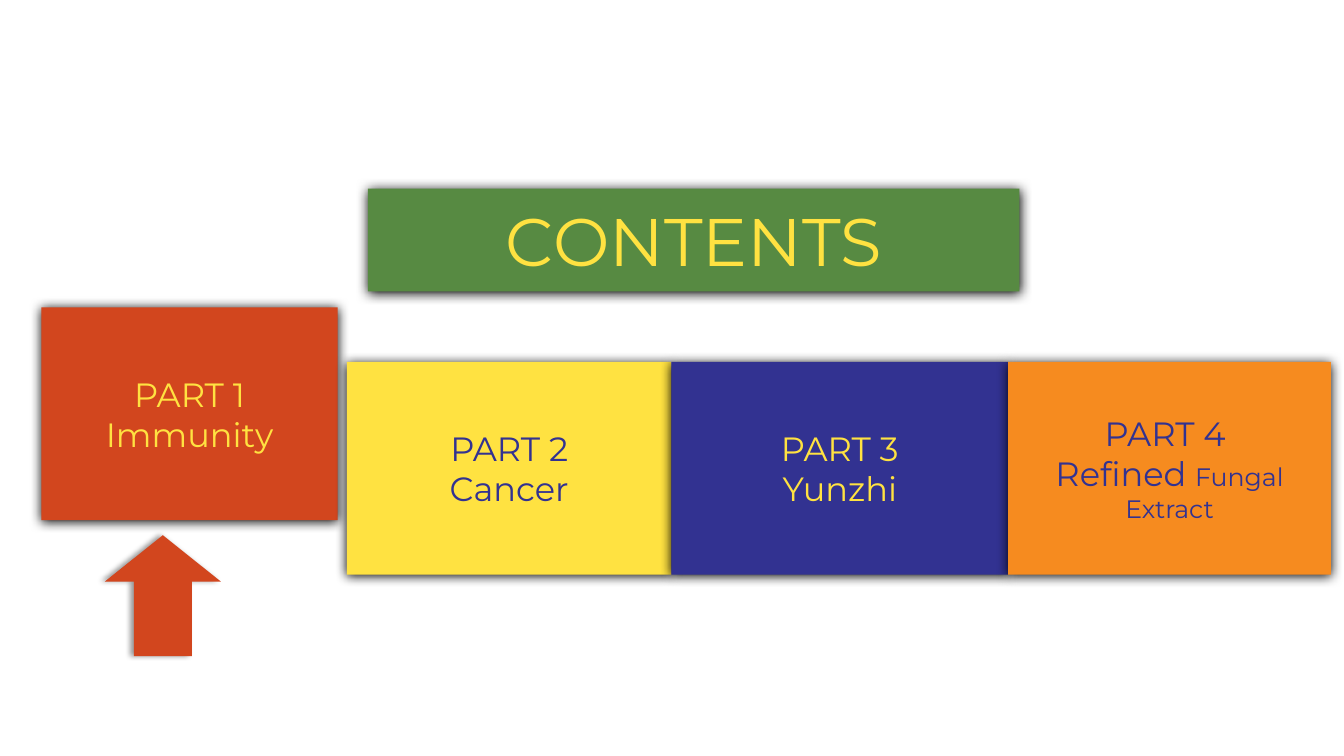
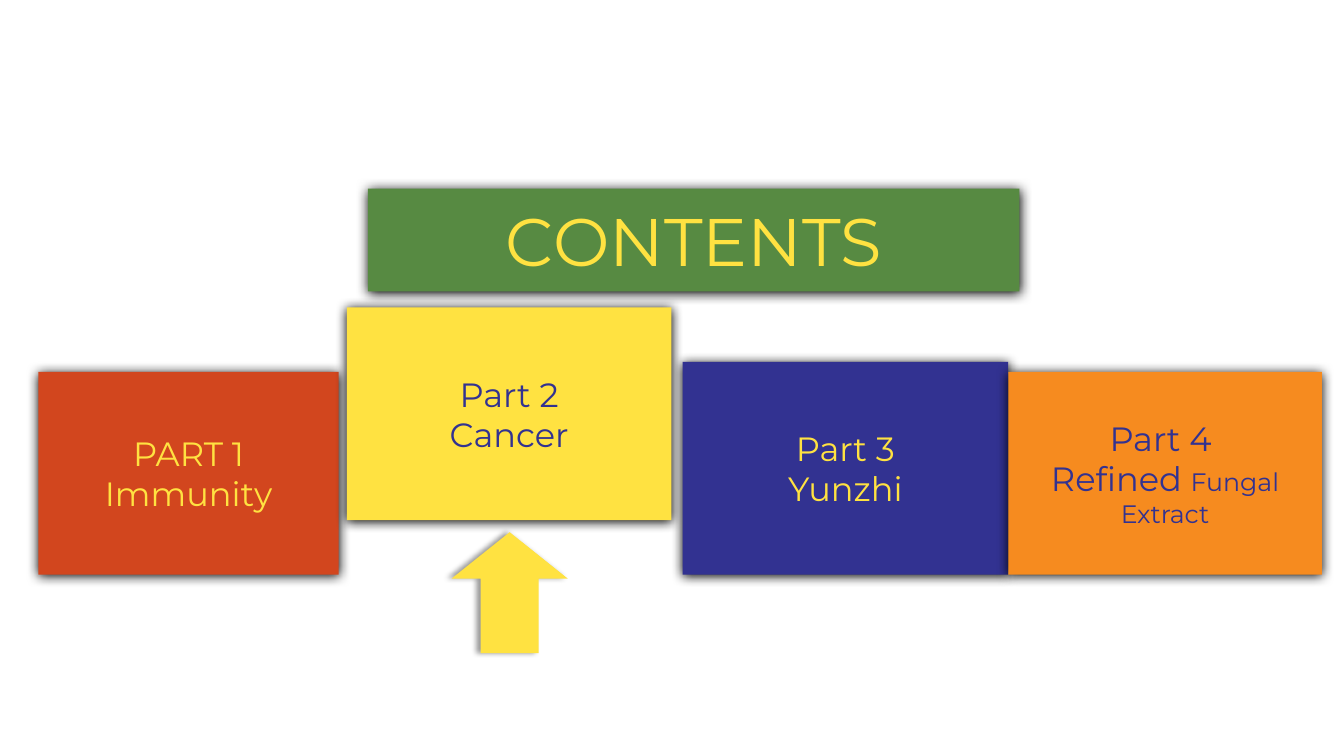
from lxml.etree import SubElement
from pptx import Presentation
from pptx.dml.color import RGBColor
from pptx.enum.shapes import MSO_SHAPE
from pptx.enum.text import MSO_ANCHOR, PP_ALIGN
from pptx.oxml.ns import qn
from pptx.util import Inches, Pt

RED, YELLOW, BLUE = "D2461E", "FFE241", "323291"
ORANGE, GREEN = "F68B1F", "578A42"
FONT = "Montserrat"
BASE, LIFT = 5.7, 0.54
GLOW = dict(alpha=100, blur=8.5, dist=1, angle=90)
SOFT = dict(alpha=40, blur=4, dist=3, angle=180)

PARTS = [
    (RED, YELLOW, [("Immunity", 24)]),
    (YELLOW, BLUE, [("Cancer", 24)]),
    (BLUE, YELLOW, [("Yunzhi", 24)]),
    (ORANGE, BLUE, [("Refined ", 24), ("Fungal Extract", 18)]),
]
SLIDES = [
    {
        "active": 0,
        "arrow": (1.04, 5.31),
        "heads": ["PART 1", "PART 2", "PART 3", "PART 4 "],
        "boxes": [(0.41, 2.94, 2.11), (3.44, 3.22, 2.11),
                  (6.66, 3.34, 2.11), (10, 3.2, 2.11)],
    },
    {
        "active": 1,
        "arrow": (4.48, 5.28),
        "heads": ["PART 1", "Part 2", "Part 3", "Part 4 "],
        "boxes": [(0.38, 2.98, 2.01), (3.44, 3.22, 2.11),
                  (6.77, 3.23, 2.11), (10, 3.11, 2.01)],
    },
]


def color(value):
    return RGBColor.from_string(value)


def shade(shape, alpha, blur, dist, angle):
    shape.shadow.inherit = False
    effect = shape._element.spPr.find(qn("a:effectLst"))
    outer = SubElement(effect, qn("a:outerShdw"), blurRad=str(Pt(blur)),
                       dist=str(Pt(dist)), dir=str(angle * 60000),
                       algn="ctr", rotWithShape="0")
    tint = SubElement(outer, qn("a:srgbClr"), val="000000")
    SubElement(tint, qn("a:alpha"), val=str(alpha * 1000))


def block(slide, kind, area, fill, glow):
    shape = slide.shapes.add_shape(kind, *map(Inches, area))
    shape.fill.solid()
    shape.fill.fore_color.rgb = color(fill)
    shape.line.fill.background()
    shade(shape, **glow)
    return shape


def write(shape, lines, ink, font=FONT):
    frame = shape.text_frame
    frame.word_wrap = True
    frame.vertical_anchor = MSO_ANCHOR.MIDDLE
    for row, runs in enumerate(lines):
        para = frame.paragraphs[0] if row == 0 else frame.add_paragraph()
        para.alignment = PP_ALIGN.CENTER
        for text, size in runs:
            run = para.add_run()
            run.text = text
            run.font.name = font
            run.font.size = Pt(size)
            run.font.color.rgb = color(ink)


def build(slide, data):
    rows = zip(data["heads"], data["boxes"], PARTS)
    for index, (head, (left, width, height), part) in enumerate(rows):
        fill, ink, body = part
        top = BASE - height - (LIFT if index == data["active"] else 0)
        box = block(slide, MSO_SHAPE.RECTANGLE,
                    (left, top, width, height), fill, GLOW)
        write(box, [[(head, 24)], body], ink=ink)
    arrow = block(slide, MSO_SHAPE.UP_ARROW, (*data["arrow"], 1.15, 1.2),
                  PARTS[data["active"]][0], SOFT)
    arrow.adjustments[0] = 0.5
    arrow.adjustments[1] = 0.4
    title = block(slide, MSO_SHAPE.RECTANGLE,
                  (3.65, 1.87, 6.46, 1.02), GREEN, GLOW)
    write(title, [[("CONTENTS", 48)]], ink=YELLOW)


def main():
    deck = Presentation()
    deck.slide_width, deck.slide_height = Inches(13.33), Inches(7.5)
    for data in SLIDES:
        build(deck.slides.add_slide(deck.slide_layouts[6]), data)
    deck.save("out.pptx")


if __name__ == "__main__":
    main()
